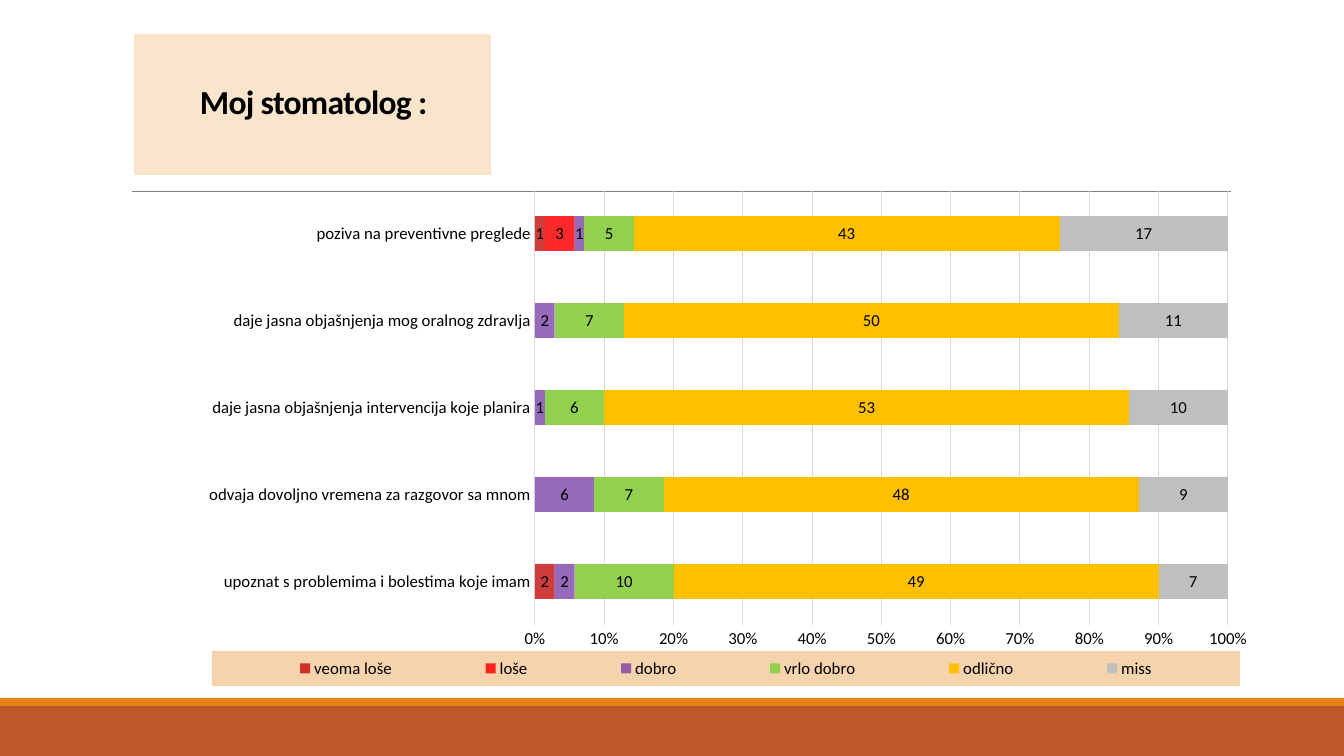
from dataclasses import dataclass
from typing import Optional

import pptx
import pptx.chart.data
import pptx.dml.color
import pptx.enum.chart
import pptx.enum.shapes
import pptx.enum.text
import pptx.oxml
import pptx.oxml.ns
import pptx.util

RGB = pptx.dml.color.RGBColor
BLACK = RGB(0x00, 0x00, 0x00)
ORANGE = RGB(0xE4, 0x83, 0x12)
RUST = RGB(0xBD, 0x58, 0x2C)
RULE_GRAY = RGB(0x80, 0x80, 0x80)
GRID_GRAY = RGB(0xD9, 0xD9, 0xD9)
DARK_RED = RGB(0xC0, 0x00, 0x00)
RED = RGB(0xFF, 0x00, 0x00)
PURPLE = RGB(0x70, 0x30, 0xA0)
GREEN = RGB(0x92, 0xD0, 0x50)
YELLOW = RGB(0xFF, 0xC0, 0x00)
SILVER = RGB(0xBF, 0xBF, 0xBF)

EMU_PER_PX = 914400 / 100.8
CHART_FONT = {"name": "Calibri", "size": pptx.util.Pt(12)}
TITLE_FONT = {"name": "Calibri", "size": pptx.util.Pt(24), "bold": True}


@dataclass(frozen=True)
class Area:
    left: int
    top: int
    width: int
    height: int


@dataclass(frozen=True)
class Block:
    area: Area
    color: RGB
    opacity: int = 100


@dataclass(frozen=True)
class Grade:
    name: str
    counts: tuple[Optional[int], ...]
    color: RGB
    opacity: int = 100


FOOTER = (
    Block(Area(0, 706, 1344, 50), RUST),
    Block(Area(0, 698, 1344, 8), ORANGE),
)
TITLE = Block(Area(134, 34, 357, 141), ORANGE, 21)
CHART = Area(187, 178, 1081, 516)
PLOT = Area(535, 190, 693, 435)
LEGEND = Area(212, 651, 1028, 35)

QUESTIONS = (
    "upoznat s problemima i bolestima koje imam",
    "odvaja dovoljno vremena za razgovor sa mnom",
    "daje jasna objašnjenja intervencija koje planira",
    "daje jasna objašnjenja mog oralnog zdravlja",
    "poziva na preventivne preglede",
)
GRADES = (
    Grade("veoma loše", (2, None, None, None, 1), DARK_RED, 76),
    Grade("loše", (None, None, None, None, 3), RED, 84),
    Grade("dobro", (2, 6, 1, 2, 1), PURPLE, 72),
    Grade("vrlo dobro", (10, 7, 6, 7, 5), GREEN),
    Grade("odlično", (49, 48, 53, 50, 43), YELLOW),
    Grade("miss", (7, 9, 10, 11, 17), SILVER),
)


def px(length: int) -> int:
    return round(length * EMU_PER_PX)


def emu_box(area: Area) -> tuple[int, ...]:
    return tuple(px(n) for n in (area.left, area.top, area.width, area.height))


def apply(target, values: dict) -> None:
    for name, value in values.items():
        setattr(target, name, value)


def style_font(font, values: dict) -> None:
    apply(font, values)
    font.color.rgb = BLACK


def set_opacity(properties, percent: int) -> None:
    if percent < 100:
        color = next(properties.iter(pptx.oxml.ns.qn("a:srgbClr")))
        alpha = color.makeelement(pptx.oxml.ns.qn("a:alpha"), {"val": str(percent * 1000)})
        color.append(alpha)


def add_block(page, block: Block):
    shape = page.shapes.add_shape(
        pptx.enum.shapes.MSO_SHAPE.RECTANGLE, *emu_box(block.area))
    shape.shadow.inherit = False
    shape.fill.solid()
    shape.fill.fore_color.rgb = block.color
    shape.line.fill.background()
    set_opacity(shape._element.spPr, block.opacity)
    return shape


def add_rule(page, left: int, right: int, top: int) -> None:
    rule = page.shapes.add_connector(
        pptx.enum.shapes.MSO_CONNECTOR.STRAIGHT, px(left), px(top), px(right), px(top))
    rule.line.color.rgb = RULE_GRAY
    rule.line.width = pptx.util.Pt(0.5)
    properties = rule._element.spPr
    properties.append(properties.makeelement(pptx.oxml.ns.qn("a:effectLst"), {}))


def add_title(page) -> None:
    frame = add_block(page, TITLE).text_frame
    apply(frame, {
        "word_wrap": True,
        "vertical_anchor": pptx.enum.text.MSO_ANCHOR.MIDDLE,
        "margin_left": px(66),
    })
    para = frame.paragraphs[0]
    apply(para, {"alignment": pptx.enum.text.PP_ALIGN.LEFT, "line_spacing": 0.85})
    span = para.add_run()
    span.text = "Moj stomatolog :"
    style_font(span.font, TITLE_FONT)
    span._r.get_or_add_rPr().set("spc", "-50")


def layout_xml(area: Area, inner: bool):
    """Manual layout, as fractions of the chart's own size."""
    fractions = {
        "x": (area.left - CHART.left) / CHART.width,
        "y": (area.top - CHART.top) / CHART.height,
        "w": area.width / CHART.width,
        "h": area.height / CHART.height,
    }
    target = '<c:layoutTarget val="inner"/>' if inner else ""
    modes = '<c:xMode val="edge"/><c:yMode val="edge"/>'
    sizes = "".join(f'<c:{key} val="{value:.4f}"/>' for key, value in fractions.items())
    return pptx.oxml.parse_xml(
        f'<c:layout {pptx.oxml.ns.nsdecls("c")}><c:manualLayout>'
        f"{target}{modes}{sizes}</c:manualLayout></c:layout>")


def drop_layout(parent) -> None:
    for old in parent.findall(pptx.oxml.ns.qn("c:layout")):
        parent.remove(old)


def style_axes(chart) -> None:
    for axis in (chart.category_axis, chart.value_axis):
        axis.major_tick_mark = pptx.enum.chart.XL_TICK_MARK.NONE
        axis.minor_tick_mark = pptx.enum.chart.XL_TICK_MARK.NONE
        style_font(axis.tick_labels.font, CHART_FONT)
    chart.value_axis.has_major_gridlines = True
    chart.value_axis.major_unit = 0.1
    chart.value_axis.format.line.fill.background()
    apply(chart.value_axis.tick_labels,
          {"number_format": "0%", "number_format_is_linked": False})
    for part in (chart.category_axis, chart.value_axis.major_gridlines):
        part.format.line.color.rgb = GRID_GRAY
        part.format.line.width = pptx.util.Pt(0.75)


def style_legend(chart) -> None:
    chart.has_legend = True
    legend = chart.legend
    apply(legend, {"position": pptx.enum.chart.XL_LEGEND_POSITION.BOTTOM,
                   "include_in_layout": False})
    style_font(legend.font, CHART_FONT)
    element = legend._element
    drop_layout(element)
    overlay = element.find(pptx.oxml.ns.qn("c:overlay"))
    overlay.addprevious(layout_xml(LEGEND, inner=False))
    background = pptx.oxml.parse_xml(
        f'<c:spPr {pptx.oxml.ns.nsdecls("c", "a")}><a:solidFill>'
        f'<a:srgbClr val="{ORANGE}"/></a:solidFill></c:spPr>')
    set_opacity(background, 35)
    overlay.addnext(background)


def add_grades_chart(page) -> None:
    data = pptx.chart.data.CategoryChartData()
    data.categories = QUESTIONS
    for grade in GRADES:
        data.add_series(grade.name, grade.counts)
    chart = page.shapes.add_chart(
        pptx.enum.chart.XL_CHART_TYPE.BAR_STACKED_100, *emu_box(CHART), data).chart
    chart.has_title = False
    style_font(chart.font, {"name": "Calibri", "size": pptx.util.Pt(10)})
    plot = chart.plots[0]
    apply(plot, {"gap_width": 150, "overlap": 100, "vary_by_categories": False})
    for series, grade in zip(plot.series, GRADES):
        series.invert_if_negative = False
        series.format.fill.solid()
        series.format.fill.fore_color.rgb = grade.color
        set_opacity(series._element.find(pptx.oxml.ns.qn("c:spPr")), grade.opacity)
        apply(series.data_labels, {
            "show_value": True,
            "position": pptx.enum.chart.XL_LABEL_POSITION.CENTER,
        })
        style_font(series.data_labels.font, CHART_FONT)
    style_axes(chart)
    style_legend(chart)
    plot_area = chart._chartSpace.chart.plotArea
    drop_layout(plot_area)
    plot_area.insert(0, layout_xml(PLOT, inner=True))


def main() -> None:
    deck = pptx.Presentation()
    apply(deck, {"slide_width": px(1344), "slide_height": px(756)})
    page = deck.slides.add_slide(deck.slide_layouts[6])
    # Footer bands and rule under the title
    for band in FOOTER:
        add_block(page, band)
    add_rule(page, 132, 1231, 191)
    # Title and survey chart
    add_title(page)
    add_grades_chart(page)
    deck.save("out.pptx")


if __name__ == "__main__":
    main()
